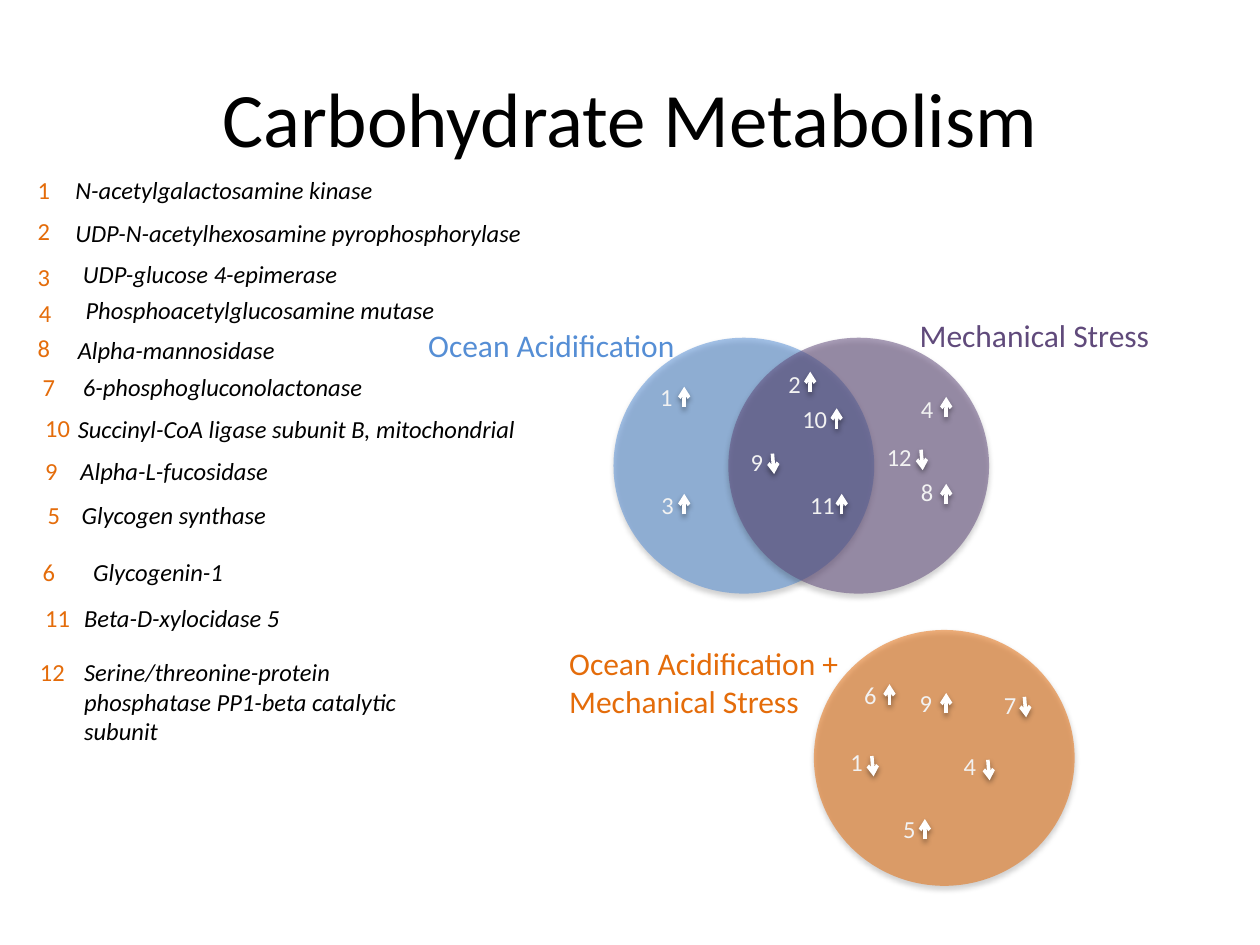
from lxml import etree
from pptx import Presentation
from pptx.dml.color import RGBColor
from pptx.enum import shapes, text
from pptx.oxml import ns
from pptx.util import Pt

COLORS = {
    "black": "000000",
    "white": "FFFFFF",
    "pale": "F2F2F2",
    "acid": "558ED5",
    "stress": "604A7B",
    "both": "E46C0A",
}
FONT = "Calibri"
ROW_HEIGHT = 24.5
ARROW_LENGTH = 11.7
CIRCLE_SIZE = (149, 146.2)

PROTEINS = [
    ("1", 14.4, 96.5, "N-acetylgalactosamine kinase", 36, 96.5, 189.4),
    ("2", 14.4, 120.2, "UDP-N-acetylhexosamine pyrophosphorylase", 36, 121, 275.8),
    ("3", 14.4, 146.2, "UDP-glucose 4-epimerase", 40.3, 144.7, 164.9),
    ("4", 15.1, 167, "Phosphoacetylglucosamine mutase", 41.8, 164.9, 219.6),
    ("8", 14.4, 186.5, "Alpha-mannosidase", 37.4, 187.9, 131),
    ("7", 17.3, 208.8, "6-phosphogluconolactonase", 40.3, 208.8, 179.3),
    ("10", 18.7, 232.6, "Succinyl-CoA ligase subunit B, mitochondrial", 37.4, 233.3, 270.7),
    ("9", 18.7, 257, "Alpha-L-fucosidase", 38.9, 257, 126),
    ("5", 20.2, 282.2, "Glycogen synthase", 39.6, 282.2, 124.6),
    ("6", 17.3, 314.6, "Glycogenin-1", 46.1, 314.6, 92.9),
    ("11", 18.7, 341.3, "Beta-D-xylocidase 5", 41, 341.3, 131),
]
CIRCLES = [("acid", 350.6, 193), ("stress", 416.2, 193), ("both", 465.1, 360)]
MARKS = [
    ("1", 370.1, 214.6, "up", 391, 221),
    ("3", 370.8, 276.5, "up", 391, 282.2),
    ("2", 443.5, 207.4, "up", 463, 212.4),
    ("10", 451.4, 227.5, "up", 478.1, 233.3),
    ("9", 421.9, 252, "down", 441.4, 259.2),
    ("11", 455.8, 276.5, "up", 481, 282.2),
    ("4", 519.1, 221.8, "up", 540.7, 226.8),
    ("12", 499.7, 249.1, "down", 526.3, 257),
    ("8", 519.1, 269.3, "up", 540.7, 276.5),
    ("6", 486.7, 385.2, "up", 508.3, 391),
    ("9", 518.4, 389.5, "up", 540.7, 396),
    ("7", 566.6, 391, "down", 585.4, 398.2),
    ("1", 478.8, 423.4, "down", 498.2, 432),
    ("4", 543.6, 425.5, "down", 564.5, 434.2),
    ("5", 509, 461.5, "up", 528.5, 468),
]


def rgb(name):
    return RGBColor.from_string(COLORS[name])


def add_child(parent, tag, **attrs):
    return etree.SubElement(parent, ns.qn(tag), {k: str(v) for k, v in attrs.items()})


def add_shadow(effects, distance, opacity):
    shadow = add_child(effects, "a:outerShdw", blurRad=Pt(3.1), dist=Pt(distance),
                       dir=5400000, rotWithShape=0)
    color = add_child(shadow, "a:srgbClr", val=COLORS["black"])
    add_child(color, "a:alpha", val=opacity * 1000)


def add_title(s, title):
    sp = s.shapes.title
    sp.left, sp.top, sp.width, sp.height = Pt(36), Pt(21.6), Pt(648), Pt(90)
    tf = sp.text_frame
    tf.text = title
    tf.vertical_anchor = text.MSO_ANCHOR.MIDDLE
    p = tf.paragraphs[0]
    p.alignment = text.PP_ALIGN.CENTER
    p.font.name, p.font.size = FONT, Pt(44)
    p.font.color.rgb = rgb("black")


def add_text(s, words, x, y, w, color, h=ROW_HEIGHT, size=14, italic=False, wrap=False):
    tf = s.shapes.add_textbox(Pt(x), Pt(y), Pt(w), Pt(h)).text_frame
    tf.word_wrap = wrap
    tf.auto_size = text.MSO_AUTO_SIZE.SHAPE_TO_FIT_TEXT
    p = tf.paragraphs[0]
    p.text = words
    p.font.name, p.font.size, p.font.italic = FONT, Pt(size), italic
    p.font.color.rgb = rgb(color)


def add_number(s, number, x, y, color):
    add_text(s, number, x, y, 14.4 + 7.2 * len(number), color)


def add_circle(s, color, x, y):
    w, h = CIRCLE_SIZE
    sp = s.shapes.add_shape(shapes.MSO_SHAPE.OVAL, Pt(x), Pt(y), Pt(w), Pt(h))
    sp.fill.solid()
    sp.fill.fore_color.rgb = rgb(color)
    fill = sp._element.spPr.find(ns.qn("a:solidFill"))
    add_child(fill[0], "a:alpha", val=53000)
    sp.line.fill.background()
    sp.shadow.inherit = False
    add_shadow(sp._element.spPr.find(ns.qn("a:effectLst")), 1.8, 35)


def add_arrow(s, direction, x, top):
    bottom = top + ARROW_LENGTH
    if direction == "up":
        ends = x, bottom, x, top
    else:
        ends = x, top, x + 1, bottom
    line = s.shapes.add_connector(shapes.MSO_CONNECTOR.STRAIGHT, *map(Pt, ends))
    line.line.color.rgb = rgb("white")
    line.line.width = Pt(2)
    props = line._element.spPr
    add_child(props.find(ns.qn("a:ln")), "a:tailEnd", type="arrow")
    add_shadow(add_child(props, "a:effectLst"), 1.6, 38)


def main():
    prs = Presentation()
    prs.slide_width, prs.slide_height = Pt(720), Pt(540)
    s = prs.slides.add_slide(prs.slide_layouts[5])
    add_title(s, "Carbohydrate Metabolism")

    for number, x, y, name, name_x, name_y, w in PROTEINS:
        add_number(s, number, x, y, "both")
        add_text(s, name, name_x, name_y, w, "black", italic=True)
    add_number(s, "12", 15.8, 372.2, "both")
    add_text(s, "Serine/threonine-protein phosphatase PP1-beta catalytic subunit",
             41, 372.2, 197.3, "black", h=59.8, italic=True, wrap=True)

    for circle in CIRCLES:
        add_circle(s, *circle)
    for number, x, y, direction, arrow_x, arrow_y in MARKS:
        add_number(s, number, x, y, "pale")
        add_arrow(s, direction, arrow_x, arrow_y)

    add_text(s, "Ocean Acidification", 237.6, 182.9, 157, "acid", h=29, size=18)
    add_text(s, "Mechanical Stress", 518.4, 177.1, 147.6, "stress", h=29, size=18)
    add_text(s, "Ocean Acidification + Mechanical Stress", 318.2, 364.3, 170.6, "both",
             h=51, size=18, wrap=True)
    prs.save("out.pptx")


if __name__ == "__main__":
    main()
